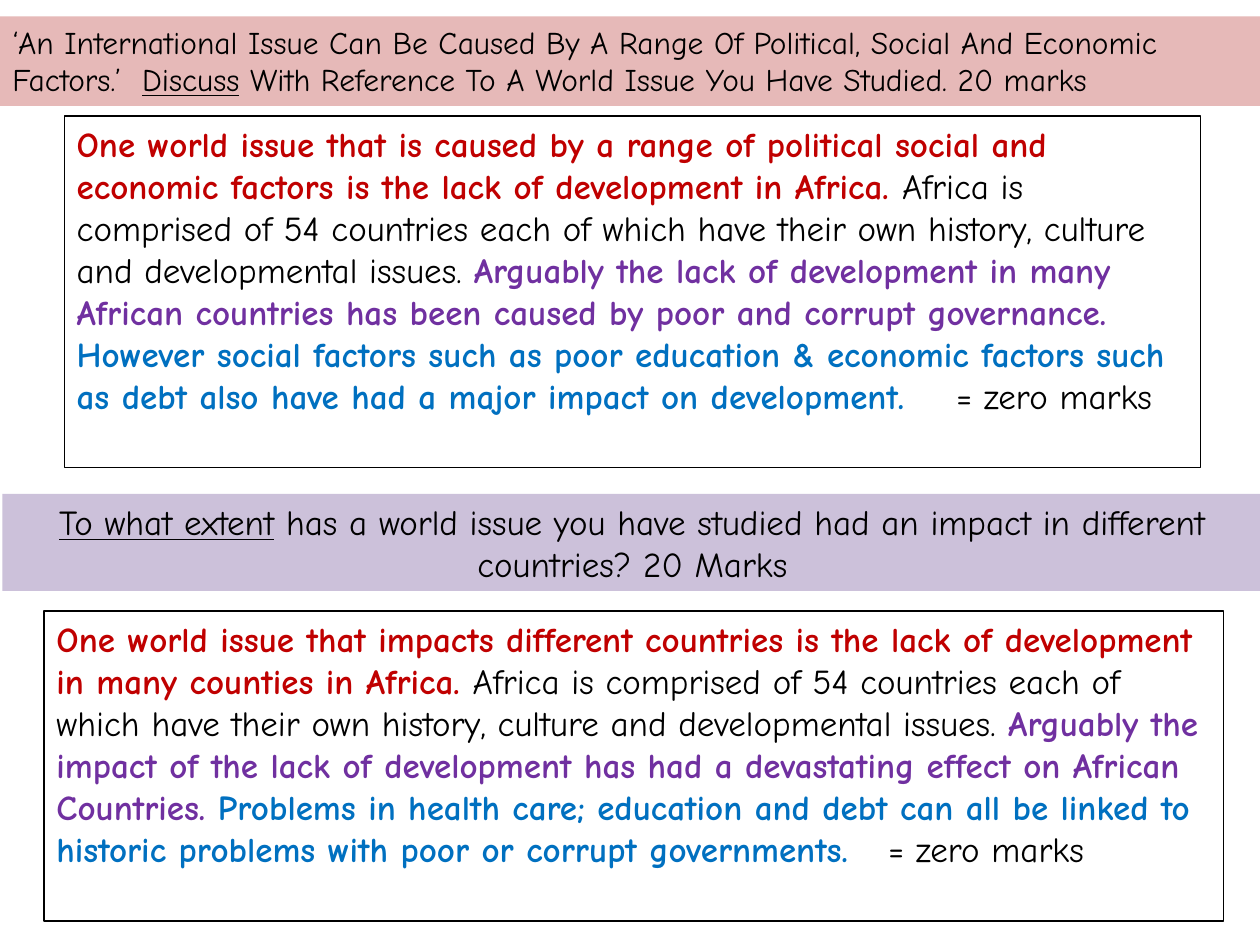
from dataclasses import dataclass
from typing import Optional

import pptx
import pptx.dml.color
import pptx.enum.text
import pptx.oxml
import pptx.oxml.ns
import pptx.util


@dataclass(frozen=True)
class Theme:
    font: str = "Comic Neue"
    title_size: int = 18
    body_size: int = 20
    border_width: float = 0.75
    ink: str = "000000"
    topic: str = "C00000"
    argument: str = "7030A0"
    counterpoint: str = "0070C0"
    rose_band: str = "E6B9B8"
    lilac_band: str = "CCC1DA"


THEME = Theme()
SLIDE_WIDTH = pptx.util.Inches(10)
SLIDE_HEIGHT = pptx.util.Inches(7.5)


@dataclass(frozen=True)
class Phrase:
    text: str
    color: str = THEME.ink
    bold: bool = False
    underline: bool = False


@dataclass(frozen=True)
class Panel:
    """A text panel; its place is in percent of the slide's width and height."""
    left: float
    top: float
    width: float
    height: float
    phrases: tuple[Phrase, ...]
    size: int = THEME.body_size
    fill: Optional[str] = None  # panels without a fill get a border
    centered: bool = False
    tab_stop: Optional[float] = None  # percent of the slide's width


def answer(topic: str, argument: str, counterpoint: str) -> tuple[Phrase, ...]:
    """Colour-code the parts of a model introduction."""
    return (
        Phrase(topic + " ", THEME.topic, bold=True),
        Phrase("Africa is comprised of 54 countries each of which have their own "
               "history, culture and developmental issues. "),
        Phrase(argument + " ", THEME.argument, bold=True),
        Phrase(counterpoint + "\t", THEME.counterpoint, bold=True),
        Phrase("= zero marks"),
    )


PANELS = (
    # Discuss question
    Panel(0, 1.73, 100, 9.47, (
        Phrase("‘An International Issue Can Be Caused By A Range Of Political, "
               "Social And Economic Factors.’\t"),
        Phrase("Discuss", underline=True),
        Phrase(" With Reference To A World Issue You Have Studied. 20 marks"),
    ), size=THEME.title_size, fill=THEME.rose_band, tab_stop=10.3),
    # Discuss answer
    Panel(5.1, 12.27, 90.2, 37.2, answer(
        "One world issue that is caused by a range of political social and economic "
        "factors is the lack of development in Africa.",
        "Arguably the lack of development in many African countries has been caused "
        "by poor and corrupt governance.",
        "However social factors such as poor education & economic factors such as "
        "debt also have had a major impact on development.",
    ), tab_stop=69.8),
    # Extent answer
    Panel(3.5, 64.67, 93.6, 32.8, answer(
        "One world issue that impacts different countries is the lack of development "
        "in many counties in Africa.",
        "Arguably the impact of the lack of development has had a devastating effect "
        "on African Countries.",
        "Problems in health care; education and debt can all be linked to historic "
        "problems with poor or corrupt governments.",
    ), tab_stop=66),
    # Extent question
    Panel(0.2, 52.27, 100, 10.27, (
        Phrase("To what extent", underline=True),
        Phrase(" has a world issue you have studied had an impact in different "
               "countries? 20 Marks"),
    ), fill=THEME.lilac_band, centered=True),
)


def rgb(color: str) -> pptx.dml.color.RGBColor:
    return pptx.dml.color.RGBColor.from_string(color)


def across(percent: float) -> int:
    return round(SLIDE_WIDTH * percent / 100)


def down(percent: float) -> int:
    return round(SLIDE_HEIGHT * percent / 100)


def add_tab_stop(paragraph, position: int) -> None:
    properties = paragraph._p.get_or_add_pPr()
    properties.append(pptx.oxml.parse_xml(
        f'<a:tabLst {pptx.oxml.ns.nsdecls("a")}>'
        f'<a:tab pos="{position}" algn="l"/></a:tabLst>'))


def add_phrase(paragraph, phrase: Phrase, size: int) -> None:
    run = paragraph.add_run()
    run.text = phrase.text
    run.font.name = THEME.font
    run.font.size = pptx.util.Pt(size)
    run.font.bold = phrase.bold
    run.font.underline = phrase.underline
    run.font.color.rgb = rgb(phrase.color)


def add_panel(slide, panel: Panel) -> None:
    shape = slide.shapes.add_textbox(across(panel.left), down(panel.top),
                                     across(panel.width), down(panel.height))
    if panel.fill:
        shape.fill.solid()
        shape.fill.fore_color.rgb = rgb(panel.fill)
    else:
        shape.line.color.rgb = rgb(THEME.ink)
        shape.line.width = pptx.util.Pt(THEME.border_width)
    shape.text_frame.word_wrap = True
    paragraph = shape.text_frame.paragraphs[0]
    if panel.centered:
        paragraph.alignment = pptx.enum.text.PP_ALIGN.CENTER
    if panel.tab_stop is not None:
        add_tab_stop(paragraph, across(panel.tab_stop))
    for phrase in panel.phrases:
        add_phrase(paragraph, phrase, panel.size)


def main() -> None:
    presentation = pptx.Presentation()
    presentation.slide_width = SLIDE_WIDTH
    presentation.slide_height = SLIDE_HEIGHT
    slide = presentation.slides.add_slide(presentation.slide_layouts[6])
    for panel in PANELS:
        add_panel(slide, panel)
    presentation.save("out.pptx")


if __name__ == "__main__":
    main()
